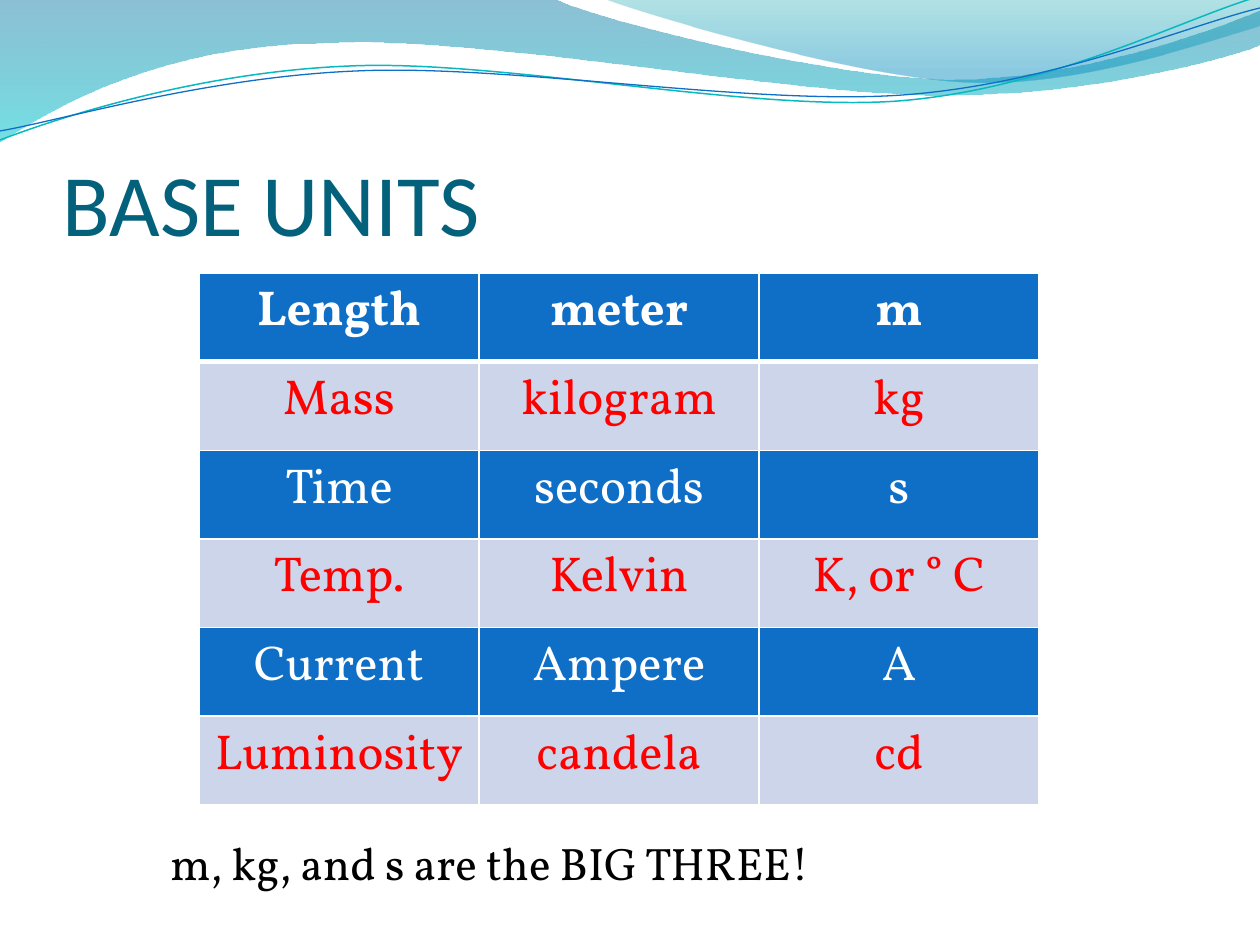
from dataclasses import dataclass
from typing import Any

from lxml.etree import SubElement as Sub
from pptx import Presentation
from pptx.dml.color import RGBColor as Rgb
from pptx.enum.text import MSO_ANCHOR as Anchor, PP_ALIGN as Align
from pptx.oxml.ns import qn
from pptx.util import Emu, Pt

SCALE = 914400 / 126  # EMU in one px
HUES = {
    "blue": "0F6FC6", "teal": "0AB8BF", "pale": "CCD5EA", "title": "04617B",
    "white": "FFFFFF", "black": "000000", "red": "FF0000",
    "deep": "0074A1", "aqua": "00C6CF", "green": "00A1A9", "sky": "008BBF",
}
SERIF = "Vollkorn"
ROWS = [
    ("Length", "meter", "m"),
    ("Mass", "kilogram", "kg"),
    ("Time", "seconds", "s"),
    ("Temp.", "Kelvin", "K, or ° C"),
    ("Current", "Ampere", "A"),
    ("Luminosity", "candela", "cd"),
]

Point = tuple[int, int]


@dataclass
class Stop:
    hue: str
    place: float
    alpha: int


@dataclass
class Wave:
    """Each leg holds one point (a line) or three (a curve)."""
    start: Point
    legs: list[list[Point]]
    stops: tuple[Stop, ...] = ()
    hue: str = ""
    width: float = 0


@dataclass
class Label:
    text: str
    box: tuple[int, int, int, int]
    font: dict[str, Any]
    hue: str
    frame: dict[str, Any]
    para: dict[str, Any]


WAVES = [
    Wave((0, 0), [
        [(554, -1)],
        [(600, 21), (837, 79), (955, 79)],
        [(1075, 79), (1207, 33), (1260, 11)],
        [(1261, 45)],
        [(1238, 55), (1096, 96), (940, 95)],
        [(784, 95), (481, 35), (324, 43)],
        [(163, 45), (58, 105), (-1, 142)],
        [(0, 0)],
    ], stops=(Stop("deep", 0, 45), Stop("aqua", 1, 55))),
    Wave((604, -1), [
        [(641, 14), (859, 78), (969, 82)],
        [(1079, 87), (1211, 40), (1260, 26)],
        [(1260, 0)],
        [(604, -1)],
    ], stops=(Stop("green", 0, 30), Stop("sky", 0.8, 45))),
    Wave((0, 140), [
        [(60, 117), (199, 72), (349, 66)],
        [(498, 59), (747, 112), (898, 101)],
        [(1050, 89), (1182, 19), (1257, -3)],
    ], hue="teal", width=0.85),
    Wave((0, 131), [
        [(59, 121), (207, 77), (357, 71)],
        [(508, 64), (752, 106), (903, 95)],
        [(1053, 84), (1186, 26), (1260, 8)],
    ], hue="blue", width=0.75),
]


def px(size: float) -> Emu:
    return Emu(round(size * SCALE))


def rgb(hue: str) -> Rgb:
    return Rgb.from_string(HUES[hue])


def put(item: Any, values: dict[str, Any]) -> None:
    for name, value in values.items():
        setattr(item, name, value)


def bend(shape: Any, legs: list[list[Point]]) -> None:
    """Join the three lines of each curved leg into one cubic curve."""
    trace = next(shape._element.spPr.iter(qn("a:path")))
    lines = iter(trace.findall(qn("a:lnTo")))
    for leg in legs:
        parts = [next(lines) for _ in leg]
        if len(parts) == 1:
            continue
        arc = trace.makeelement(qn("a:cubicBezTo"))
        parts[0].addprevious(arc)
        for part in parts:
            arc.append(part[0])
            trace.remove(part)


def draw_wave(slide: Any, wave: Wave) -> None:
    dots = [wave.start] + [dot for leg in wave.legs for dot in leg]
    ends = [(px(x), px(y)) for x, y in dots]
    pen = slide.shapes.build_freeform(*ends[0], scale=1.0)
    pen.add_line_segments(ends[1:], close=bool(wave.stops))
    shape = pen.convert_to_shape()
    bend(shape, wave.legs)
    shape.shadow.inherit = False
    if not wave.stops:
        shape.fill.background()
        shape.line.color.rgb = rgb(wave.hue)
        shape.line.width = Pt(wave.width)
        return
    shape.line.fill.background()
    shape.fill.gradient()
    shape.fill.gradient_angle = 270
    for mark, stop in zip(shape.fill.gradient_stops, wave.stops):
        mark.color.rgb = rgb(stop.hue)
        mark.position = stop.place
    tints = shape._element.spPr.iter(qn("a:srgbClr"))
    for tint, stop in zip(list(tints), wave.stops):
        Sub(tint, qn("a:alpha"), val=str(stop.alpha * 1000))


def write(para: Any, text: str, font: dict[str, Any], hue: str) -> None:
    run = para.add_run()
    run.text = text
    put(run.font, font)
    run.font.color.rgb = rgb(hue)


def draw_label(slide: Any, label: Label) -> None:
    frame = slide.shapes.add_textbox(*map(px, label.box)).text_frame
    put(frame, {"word_wrap": True} | label.frame)
    para = frame.paragraphs[0]
    put(para, label.para)
    write(para, label.text, label.font, label.hue)


def edge(cell: Any, side: str, width: float) -> None:
    line = Sub(cell._tc.get_or_add_tcPr(), qn(f"a:ln{side}"), w=str(Pt(width)))
    Sub(Sub(line, qn("a:solidFill")), qn("a:srgbClr"), val=HUES["white"])


def draw_table(slide: Any, left: int, top: int, wide: int, high: int) -> None:
    """Draw the units in equal columns and rows within the given size."""
    rows, cols = len(ROWS), len(ROWS[0])
    grid = slide.shapes.add_table(rows, cols, *map(px, (left, top, wide, high))).table
    for col in grid.columns:
        col.width = px(wide / cols)
    for r, words in enumerate(ROWS):
        grid.rows[r].height = px(high / rows)
        odd = r % 2 == 1
        font = {"name": SERIF, "size": Pt(28), "bold": r == 0}
        for c, word in enumerate(words):
            cell = grid.cell(r, c)
            for side in "LRTB":
                thick = (r, side) in ((0, "B"), (1, "T"))
                edge(cell, side, 3 if thick else 1)
            cell.fill.solid()
            cell.fill.fore_color.rgb = rgb("pale" if odd else "blue")
            para = cell.text_frame.paragraphs[0]
            para.alignment = Align.CENTER
            write(para, word, font, "red" if odd else "white")


LABELS = [
    Label("BASE UNITS", (63, 96, 1134, 158),
          {"name": "Calibri", "size": Pt(50)}, "title",
          {"margin_left": 0, "margin_right": 0, "margin_bottom": 0,
           "vertical_anchor": Anchor.BOTTOM}, {}),
    Label("m, kg, and s are the BIG THREE!", (158, 829, 914, 79),
          {"name": SERIF, "size": Pt(26)}, "black", {},
          {"space_before": Pt(5.2)}),
]


def main() -> None:
    deck = Presentation()
    put(deck, {"slide_width": px(1260), "slide_height": px(945)})
    slide = deck.slides.add_slide(deck.slide_layouts[6])
    for wave in WAVES:
        draw_wave(slide, wave)
    for label in LABELS:
        draw_label(slide, label)
    draw_table(slide, 199, 273, 840, 532)
    deck.save("out.pptx")


if __name__ == "__main__":
    main()
